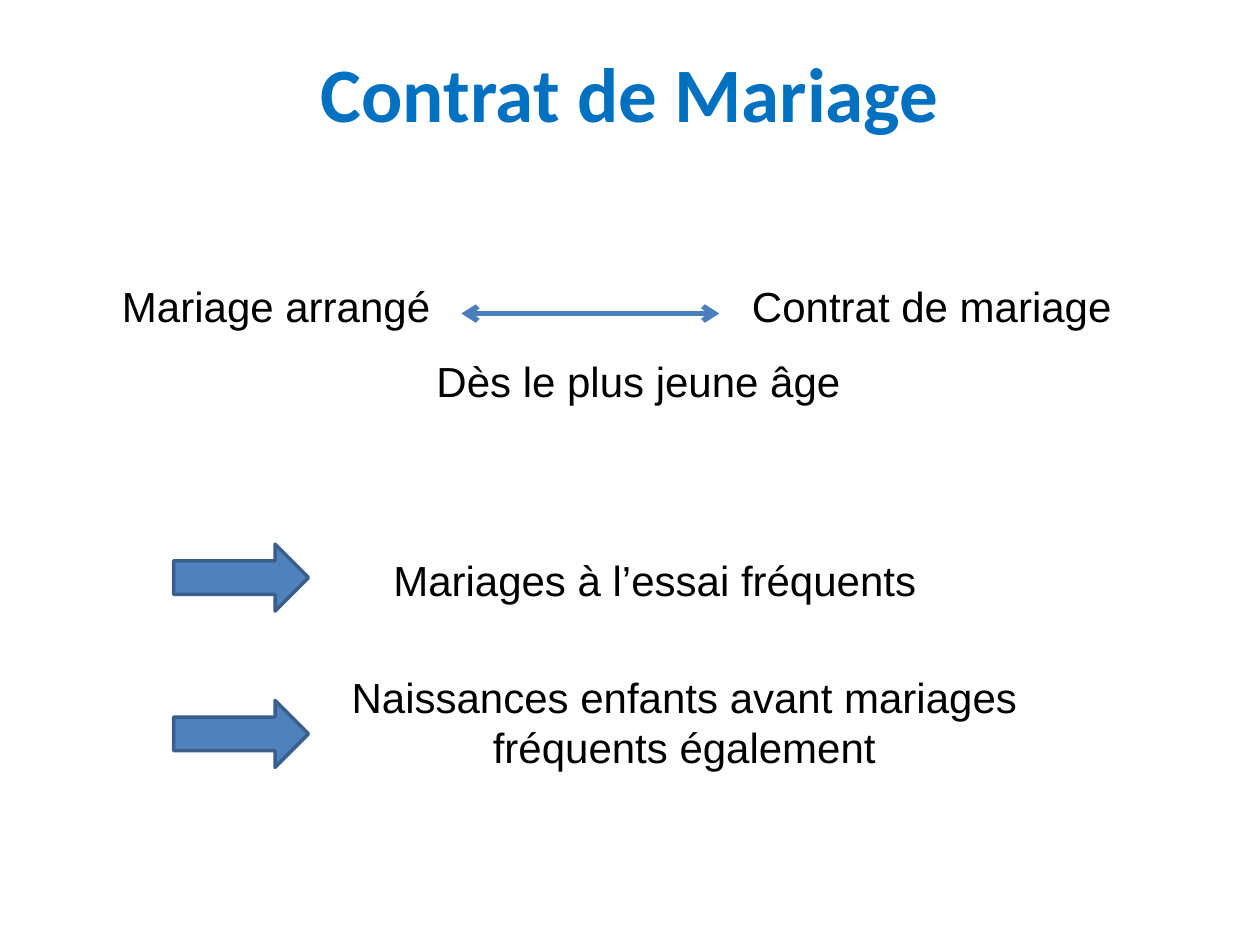
import pptx
import pptx.dml.color
import pptx.enum.shapes
import pptx.enum.text
import pptx.util
import lxml.etree
from pptx.oxml.ns import qn

Cm = pptx.util.Cm
Pt = pptx.util.Pt
RGBColor = pptx.dml.color.RGBColor
Align = pptx.enum.text.PP_ALIGN

TITLE_BLUE = RGBColor(0x00, 0x70, 0xC0)
TEXT_BLACK = RGBColor(0x00, 0x00, 0x00)
LINE_BLUE = RGBColor(0x4B, 0x7E, 0xBC)
ARROW_FILL = RGBColor(0x4F, 0x81, 0xBD)
ARROW_OUTLINE = RGBColor(0x3A, 0x5F, 0x8C)


def format_text(text_frame, font_name, size, color, alignment, bold=False):
    for paragraph in text_frame.paragraphs:
        paragraph.alignment = alignment
        for run in paragraph.runs:
            run.font.name = font_name
            run.font.size = Pt(size)
            run.font.bold = bold
            run.font.color.rgb = color


def add_title(slide, left, top, width, height):
    title = slide.shapes.title
    title.left, title.top, title.width, title.height = left, top, width, height
    title.text_frame.text = "Contrat de Mariage"
    title.text_frame.vertical_anchor = pptx.enum.text.MSO_ANCHOR.MIDDLE
    format_text(title.text_frame, "Calibri", 44, TITLE_BLUE, Align.CENTER, True)


def add_label(slide, left, top, width, height, text, alignment=Align.CENTER):
    label = slide.shapes.add_textbox(left, top, width, height)
    label.text_frame.word_wrap = True
    label.text_frame.text = text
    format_text(label.text_frame, "Arial", 24, TEXT_BLACK, alignment)
    return label


def set_tab_stops(paragraph, positions):
    properties = paragraph._p.get_or_add_pPr()
    tab_list = lxml.etree.SubElement(properties, qn("a:tabLst"))
    for position in positions:
        lxml.etree.SubElement(tab_list, qn("a:tab"), pos=str(int(position)), algn="l")


def add_double_arrow(slide, left, top, width):
    connector = slide.shapes.add_connector(
        pptx.enum.shapes.MSO_CONNECTOR.STRAIGHT, left, top, left + width, top)
    connector.line.color.rgb = LINE_BLUE
    connector.line.width = Pt(3)
    line = connector.line._get_or_add_ln()
    for end in ("a:headEnd", "a:tailEnd"):
        lxml.etree.SubElement(line, qn(end), type="arrow")
    lxml.etree.SubElement(connector._element.spPr, qn("a:effectLst"))


def add_marriage_relation(slide, left, top, width):
    row_height = Cm(1.27)
    terms = add_label(slide, left, top, width, row_height,
                      "Mariage arrangé\t\t\tContrat de mariage", Align.LEFT)
    set_tab_stops(terms.text_frame.paragraphs[0], [Cm(2.54 * step) for step in (3, 4, 5)])
    add_double_arrow(slide, left + Cm(7.09), top + Cm(0.78), Cm(5.2))
    add_label(slide, left + Cm(0.41), top + Cm(1.5), width, row_height,
              "Dès le plus jeune âge")


def add_consequence(slide, left, top, text, text_box):
    text_left, text_top, text_width, text_height = text_box
    add_label(slide, left + text_left, top + text_top, text_width, text_height, text)
    arrow = slide.shapes.add_shape(
        pptx.enum.shapes.MSO_SHAPE.RIGHT_ARROW, left, top, Cm(2.72), Cm(1.35))
    arrow.shadow.inherit = False
    arrow.fill.solid()
    arrow.fill.fore_color.rgb = ARROW_FILL
    arrow.line.color.rgb = ARROW_OUTLINE
    arrow.line.width = Pt(2)


def main():
    presentation = pptx.Presentation()
    presentation.slide_width = Cm(25.4)
    presentation.slide_height = Cm(19.05)
    slide = presentation.slides.add_slide(presentation.slide_layouts[5])
    add_title(slide, Cm(1.9), Cm(0.74), Cm(21.6), Cm(2.2))
    add_marriage_relation(slide, Cm(2.21), Cm(5.54), Cm(20.5))
    add_consequence(slide, Cm(3.5), Cm(10.97), "Mariages à l’essai fréquents",
                    (Cm(2.6), Cm(0.08), Cm(14.2), Cm(1.27)))
    add_consequence(slide, Cm(3.5), Cm(14.12),
                    "Naissances enfants avant mariages\nfréquents également",
                    (Cm(1.38), Cm(-0.71), Cm(17.83), Cm(2.31)))
    presentation.save("out.pptx")


if __name__ == "__main__":
    main()
